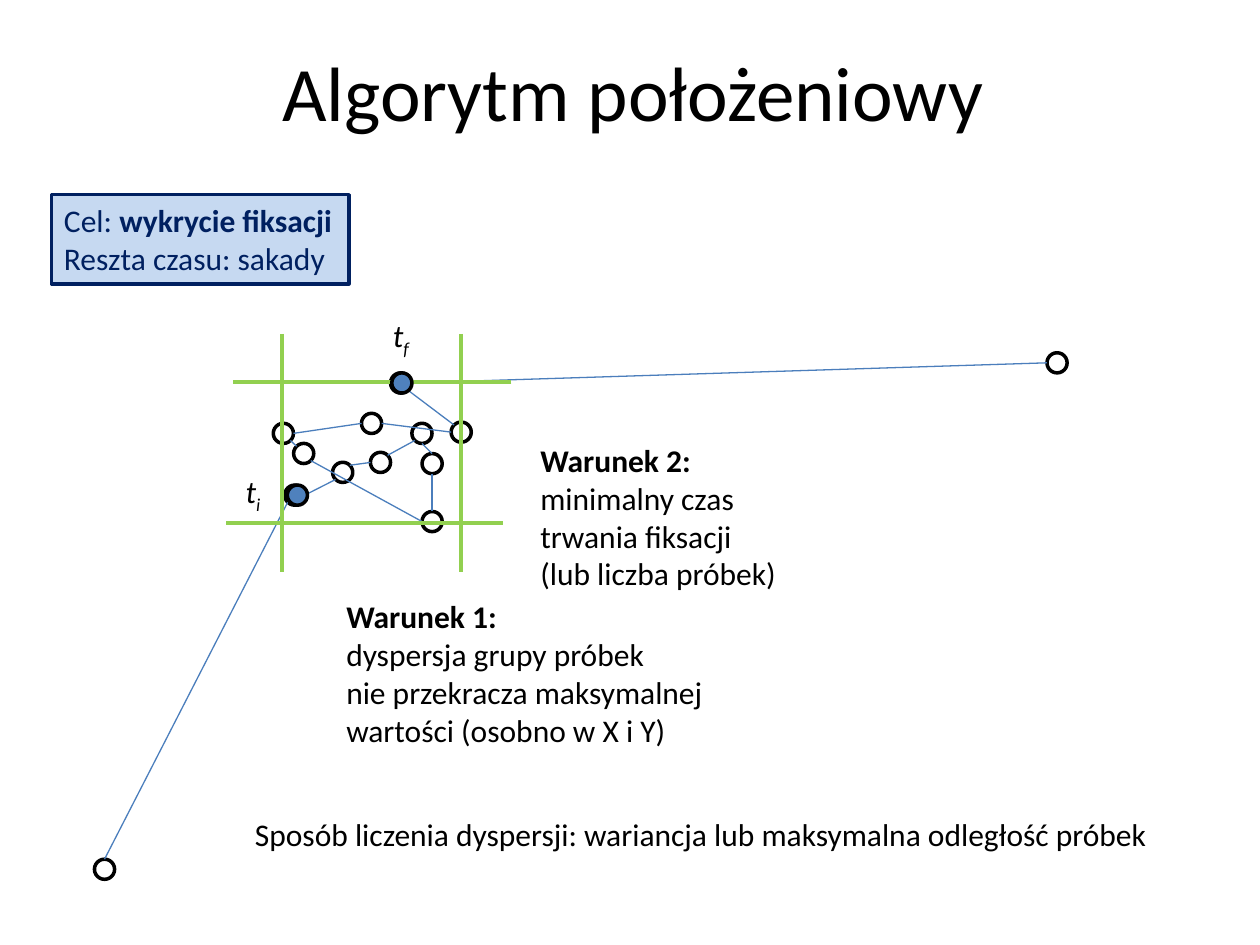
from math import cos, radians, sin

from lxml import etree
from pptx import Presentation
from pptx.dml.color import RGBColor
from pptx.enum.shapes import MSO_CONNECTOR, MSO_SHAPE
from pptx.enum.text import MSO_ANCHOR, MSO_AUTO_SIZE, PP_ALIGN
from pptx.oxml.ns import qn
from pptx.util import Pt

STRAIGHT = MSO_CONNECTOR.STRAIGHT
OVAL, RECTANGLE = MSO_SHAPE.OVAL, MSO_SHAPE.RECTANGLE
MIDDLE, TOP = MSO_ANCHOR.MIDDLE, MSO_ANCHOR.TOP
CENTER, LEFT = PP_ALIGN.CENTER, PP_ALIGN.LEFT
NO_AUTOSIZE = MSO_AUTO_SIZE.NONE

FONT = "Calibri"
BLACK, NAVY, PALE_BLUE = "000000", "002060", "C6D9F1"
PATH_BLUE, DOT_BLUE, GREEN = "4B7EBC", "4F81BD", "92D050"
DIAMETER = 11.5

# Left and top of each gaze sample, in order of time.
SAMPLES = [
    (54, 491), (162.7, 277.2), (190.1, 264.2), (211.7, 258.5),
    (235.4, 241.9), (241.2, 259.2), (241.2, 292.3), (167.8, 253.4),
    (156.2, 241.9), (206.6, 236.2), (257.8, 241.2), (223.2, 213.1),
    (598.3, 201.6),
]
# Angles at which each link leaves one sample and enters the next:
# 0 is right, 90 is bottom, 180 is left, 270 is top.
LINK_ANGLES = [
    (270, 135), (0, 135), (315, 180), (315, 135), (90, 270), (90, 270),
    (180, 45), (225, 45), (0, 180), (0, 180), (225, 45), (0, 180),
]
FIXATION_ENDS = [(164.2, 277.2), (223.9, 213.1)]
LIMITS = [
    ((161.3, 190.8), (161.3, 326.9)),
    ((263.5, 190.8), (263.5, 326.9)),
    ((292.3, 218.2), (133.2, 218.2)),
    ((287.3, 298.8), (128.9, 298.8)),
]


def color(value):
    return RGBColor.from_string(value)


def add_span(para, text, size=18, ink=BLACK, bold=False, italic=False, baseline=0):
    """Add formatted text; baseline is a shift in percent."""
    span = para.add_run()
    span.text = text
    font = span.font
    font.name, font.size = FONT, Pt(size)
    font.bold, font.italic = bold, italic
    font.color.rgb = color(ink)
    if baseline:
        span._r.get_or_add_rPr().set("baseline", str(baseline * 1000))


def fill_text(box, lines, **style):
    """Write lines, each a list of (text, format) spans, as paragraphs."""
    frame = box.text_frame
    frame.word_wrap = False
    frame.auto_size = NO_AUTOSIZE
    frame.vertical_anchor = TOP
    for index, spans in enumerate(lines):
        para = frame.add_paragraph() if index else frame.paragraphs[0]
        para.alignment = LEFT
        for text, extra in spans:
            add_span(para, text, **{**style, **extra})


def add_label(page, left, top, width, height, lines, **style):
    box = page.shapes.add_textbox(Pt(left), Pt(top), Pt(width), Pt(height))
    fill_text(box, lines, **style)


def add_condition(page, left, top, width, heading, body):
    lines = [[(heading, {"bold": True})]] + [[(line, {})] for line in body]
    add_label(page, left, top, width, 94.3, lines)


def add_outlined(page, kind, left, top, width, height, line, fill=None):
    shape = page.shapes.add_shape(kind, Pt(left), Pt(top), Pt(width), Pt(height))
    shape.shadow.inherit = False
    if fill:
        shape.fill.solid()
        shape.fill.fore_color.rgb = color(fill)
    else:
        shape.fill.background()
    shape.line.color.rgb = color(line)
    shape.line.width = Pt(2)
    return shape


def add_sample(page, place, fill=None):
    add_outlined(page, OVAL, *place, DIAMETER, DIAMETER, BLACK, fill)


def add_line(page, start, end, ink, width):
    line = page.shapes.add_connector(
        STRAIGHT, *(Pt(value) for value in (*start, *end)))
    line.line.color.rgb = color(ink)
    line.line.width = Pt(width)
    etree.SubElement(line._element.spPr, qn("a:effectLst"))


def rim_point(place, angle):
    """Return the point on a sample's rim at an angle in degrees."""
    radius = DIAMETER / 2
    left, top = place
    return (left + radius * (1 + cos(radians(angle))),
            top + radius * (1 + sin(radians(angle))))


def add_title(page, text):
    title = page.shapes.title
    title.left, title.top = Pt(14.4), Pt(25.9)
    title.width, title.height = Pt(694.8), Pt(51.8)
    title.text_frame.vertical_anchor = MIDDLE
    para = title.text_frame.paragraphs[0]
    para.alignment = CENTER
    add_span(para, text, size=44)


def add_gaze_path(page):
    for place in SAMPLES:
        add_sample(page, place)
    for start, end, (leave, enter) in zip(SAMPLES, SAMPLES[1:], LINK_ANGLES):
        add_line(page, rim_point(start, leave), rim_point(end, enter),
                 PATH_BLUE, 0.75)
    for start, end in LIMITS:
        add_line(page, start, end, GREEN, 2)


def add_fixation_ends(page):
    for place in FIXATION_ENDS:
        add_sample(page, place, DOT_BLUE)
    for left, top, index in [(133.2, 266.4, "i"), (217.4, 177.1, "f")]:
        add_label(page, left, top, 24, 28.8,
                  [[("t", {}), (index, {"baseline": -25})]], italic=True)


def add_goal(page):
    goal = add_outlined(page, RECTANGLE, 29.5, 111.3, 169.9, 50.9, NAVY, PALE_BLUE)
    fill_text(goal, [
        [("Cel: ", {}), ("wykrycie fiksacji", {"bold": True})],
        [("Reszta czasu: sakady", {})],
    ], ink=NAVY)


def main():
    deck = Presentation()
    deck.slide_width, deck.slide_height = Pt(720), Pt(540)
    page = deck.slides.add_slide(deck.slide_layouts[5])
    add_title(page, "Algorytm położeniowy")
    add_gaze_path(page)
    add_condition(page, 190.8, 337.7, 220.3, "Warunek 1:", [
        "dyspersja grupy próbek",
        "nie przekracza maksymalnej",
        "wartości (osobno w X i Y)",
    ])
    add_condition(page, 301.7, 248.4, 151.2, "Warunek 2:", [
        "minimalny czas", "trwania fiksacji", "(lub liczba próbek)",
    ])
    add_label(page, 138.6, 462.2, 529.9, 28.8, [[(
        "Sposób liczenia dyspersji: wariancja lub maksymalna odległość próbek", {})]])
    add_fixation_ends(page)
    add_goal(page)
    deck.save("out.pptx")


if __name__ == "__main__":
    main()
